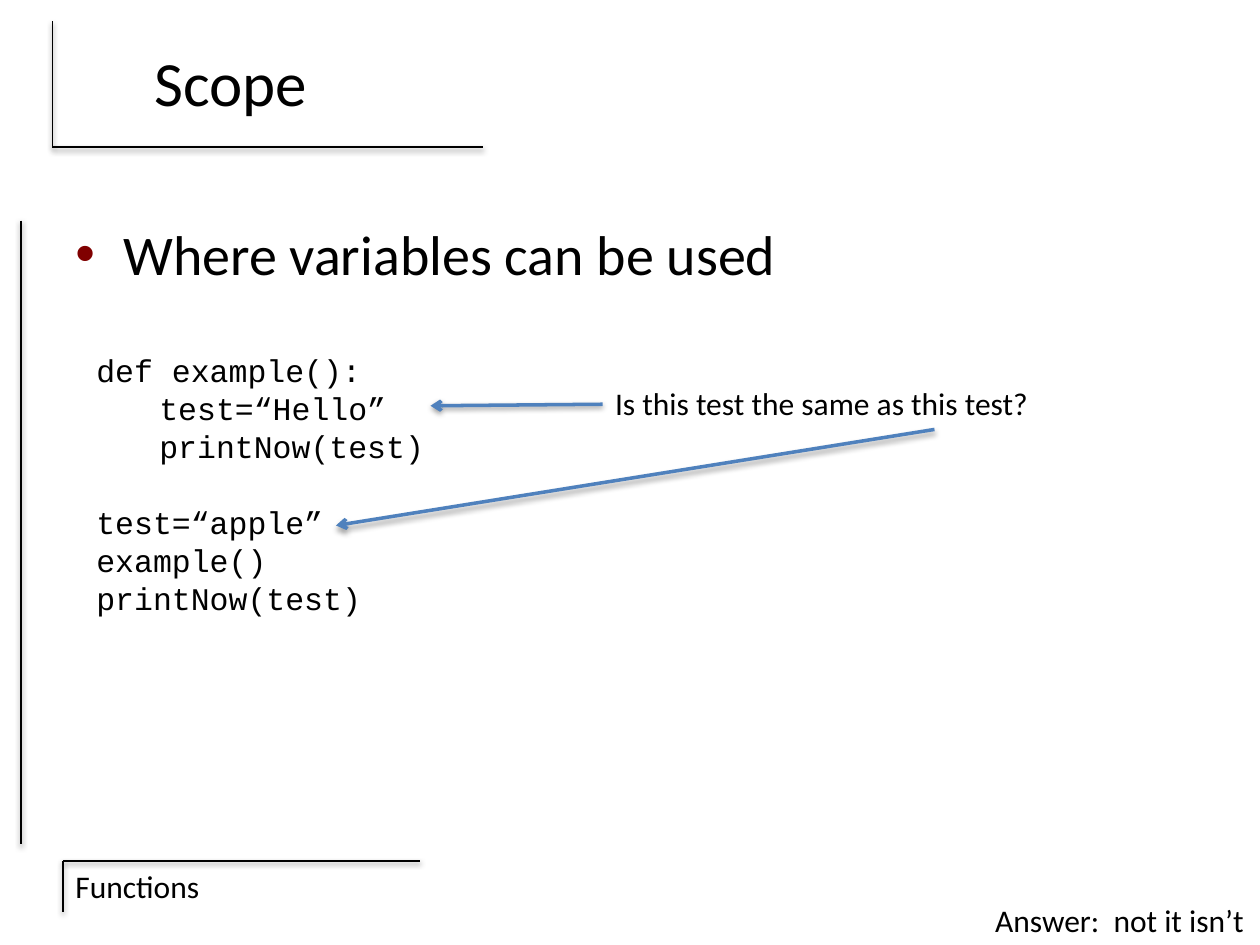
from dataclasses import dataclass

from lxml import etree
from pptx import Presentation
from pptx.dml.color import RGBColor
from pptx.enum.shapes import MSO_CONNECTOR
from pptx.enum.text import MSO_ANCHOR, MSO_AUTO_SIZE, PP_ALIGN
from pptx.oxml.ns import qn
from pptx.util import Inches, Pt

STRAIGHT = MSO_CONNECTOR.STRAIGHT
MIDDLE = MSO_ANCHOR.MIDDLE
CENTER = PP_ALIGN.CENTER
NO_FIT = MSO_AUTO_SIZE.NONE

BLACK = RGBColor(0x00, 0x00, 0x00)
BLUE = RGBColor(0x4F, 0x81, 0xBD)
MAROON = RGBColor(0x80, 0x00, 0x00)

COLUMNS, ROWS = 120, 90
CELL = Inches(10) / COLUMNS

PLAIN = {"name": "Calibri", "size": Pt(18)}
CODE = {"name": "Courier New", "size": Pt(18)}
HEADING = {"name": "Calibri", "size": Pt(36)}
BODY = {"name": "Calibri", "size": Pt(32)}
CODE_LEADING = Pt(21.7)

# Each entry: indented, begins a new block, text
CODE_LINES = [
    (False, False, "def example():"),
    (True, False, "test=“Hello”"),
    (True, False, "printNow(test)"),
    (False, True, "test=“apple”"),
    (False, False, "example()"),
    (False, False, "printNow(test)"),
]


def cells(count):
    return round(count * CELL)


@dataclass
class Box:
    """A region in grid cells; its contents are placed from its top left corner."""
    left: float
    top: float
    width: float
    height: float

    def point(self, x, y):
        return cells(self.left + x), cells(self.top + y)

    def inner(self, x, y, width, height):
        return Box(self.left + x, self.top + y, width, height)

    def frame(self):
        return *self.point(0, 0), cells(self.width), cells(self.height)


def write(para, text, formats):
    span = para.add_run()
    span.text = text
    span.font.color.rgb = BLACK
    for name, value in formats.items():
        setattr(span.font, name, value)


def add_frame(page, box, wrap=True):
    frame = page.shapes.add_textbox(*box.frame()).text_frame
    frame.word_wrap = wrap
    return frame


def add_text(page, box, text, formats, wrap=True):
    """Add a text box and return its only paragraph."""
    para = add_frame(page, box, wrap).paragraphs[0]
    write(para, text, formats)
    return para


def add_line(page, start, end, color=BLACK, width=1, arrow=False):
    """Draw a line with a soft shadow below it, and an arrowhead at its end if asked."""
    line = page.shapes.add_connector(STRAIGHT, *start, *end)
    line.line.color.rgb = color
    line.line.width = Pt(width)
    props = line._element.spPr
    if arrow:
        etree.SubElement(props.find(qn("a:ln")), qn("a:tailEnd"), type="arrow")
    effects = etree.SubElement(props, qn("a:effectLst"))
    shadow = etree.SubElement(
        effects, qn("a:outerShdw"), blurRad=str(Pt(3.1)), dist=str(Pt(1.6)),
        dir="5400000", rotWithShape="0")
    shade = etree.SubElement(shadow, qn("a:srgbClr"), val=str(BLACK))
    etree.SubElement(shade, qn("a:alpha"), val="38000")


def add_heading(page, box):
    corner = box.point(0, box.height)
    add_line(page, box.point(box.width, box.height), corner)
    add_line(page, box.point(0, 0), corner)
    title = page.shapes.title
    title.left, title.top, title.width, title.height = box.inner(1, 0, 32, 11.4).frame()
    frame = title.text_frame
    frame.auto_size = NO_FIT
    frame.vertical_anchor = MIDDLE
    para = frame.paragraphs[0]
    para.alignment = CENTER
    write(para, "Scope", HEADING)


def add_footer(page, box):
    corner = box.point(0, 0)
    add_line(page, box.point(box.width, 0), corner)
    add_line(page, corner, box.point(0, box.height))
    add_text(page, box.inner(0, 0, 29, 4.8), "Functions", PLAIN)


def add_bullet(page, box):
    para = add_text(page, box, "Where variables can be used", BODY)
    para.space_before = Pt(6.4)
    props = para._p.get_or_add_pPr()
    props.set("marL", str(Inches(0.38)))
    props.set("indent", str(-Inches(0.38)))
    color = etree.SubElement(props, qn("a:buClr"))
    etree.SubElement(color, qn("a:srgbClr"), val=str(MAROON))
    etree.SubElement(props, qn("a:buFont"), typeface="Arial")
    etree.SubElement(props, qn("a:buChar"), char="•")


def add_code(page, box):
    frame = add_frame(page, box)
    for number, (indented, new_block, text) in enumerate(CODE_LINES):
        para = frame.add_paragraph() if number else frame.paragraphs[0]
        para.line_spacing = CODE_LEADING
        if new_block:
            para.space_before = CODE_LEADING
        if indented:
            para._p.get_or_add_pPr().set("marL", str(Inches(0.5)))
        write(para, text, CODE)


def add_question(page, box):
    """Ask about the two variables and point at both of them."""
    add_text(page, box.inner(0, 0, 42.1, 4.8),
             "Is this test the same as this test?", PLAIN, wrap=False)
    arrows = [((0, 2.5), (-16.4, 2.65)), ((31.6, 4.9), (-25.4, 14.05))]
    for start, end in arrows:
        add_line(page, box.point(*start), box.point(*end), BLUE, 2, arrow=True)


def main():
    deck = Presentation()
    deck.slide_width, deck.slide_height = cells(COLUMNS), cells(ROWS)
    page = deck.slides.add_slide(deck.slide_layouts.get_by_name("Title Only"))

    margin = Box(2, 21, 0, 59.4)
    add_line(page, margin.point(0, 0), margin.point(0, margin.height))
    add_footer(page, Box(6, 82, 34, 4.9))
    add_heading(page, Box(5, 2, 41, 12))
    add_bullet(page, Box(6, 20.3, 108, 59.4))
    add_code(page, Box(8, 32.8, 60, 26.6))
    add_question(page, Box(57.4, 36, 42.1, 14))
    add_text(page, Box(93.6, 85.2, 26.4, 4.8), "Answer:  not it isn’t", PLAIN, wrap=False)

    deck.save("out.pptx")


if __name__ == "__main__":
    main()
